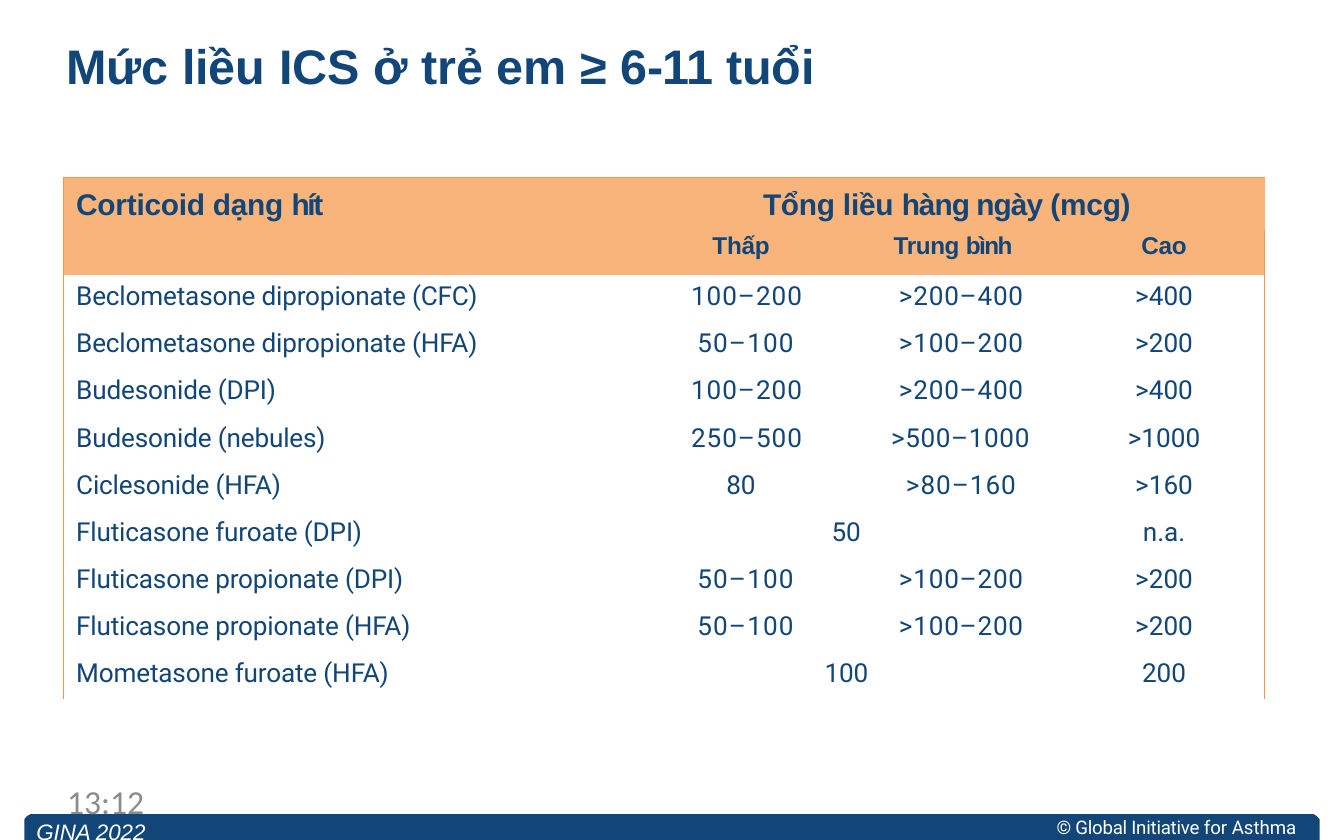
"""Build the slide with the ICS dose table for children aged 6 to 11."""
import pptx
import pptx.dml.color
import pptx.enum.text
import pptx.oxml
import pptx.oxml.ns
import pptx.util

Cm = pptx.util.Cm
Pt = pptx.util.Pt
ALIGN = pptx.enum.text.PP_ALIGN
NAVY = pptx.dml.color.RGBColor(0x12, 0x46, 0x79)
PEACH = pptx.dml.color.RGBColor(0xF8, 0xB4, 0x7A)
ORANGE = pptx.dml.color.RGBColor(0xF7, 0x95, 0x46)
GREY = pptx.dml.color.RGBColor(0x8C, 0x8C, 0x8C)
WHITE = pptx.dml.color.RGBColor(0xFF, 0xFF, 0xFF)
PAGE_WIDTH, PAGE_HEIGHT = 25.4, 15.88
PLAIN_TABLE = "{2D5ABB26-0587-4C30-8999-92F81FD0307C}"

COLUMNS = [9.91, 5.51, 3.71, 3.58]
ROWS = [0.99, 0.86] + [0.89] * 9
DOSES = [
    ("Beclometasone dipropionate (CFC)", "100–200", ">200–400", ">400"),
    ("Beclometasone dipropionate (HFA)", "50–100", ">100–200", ">200"),
    ("Budesonide (DPI)", "100–200", ">200–400", ">400"),
    ("Budesonide (nebules)", "250–500", ">500–1000", ">1000"),
    ("Ciclesonide (HFA)", "80", ">80–160", ">160"),
    ("Fluticasone furoate (DPI)", "50", "", "n.a."),
    ("Fluticasone propionate (DPI)", "50–100", ">100–200", ">200"),
    ("Fluticasone propionate (HFA)", "50–100", ">100–200", ">200"),
    ("Mometasone furoate (HFA)", "100", "", "200"),
]
LOW_BY_LENGTH = {6: (2.08, 0.6), 7: (1.96, 0.5)}
MEDIUM_BY_LENGTH = {7: (0.51, 0.5), 8: (0.38, 0.4), 9: (0.23, 0.3)}
SHARED_MARGIN = {"50": 0.34, "100": 0.2}


class SlideBuilder:
    """Hold the text colour and the current page, and add elements to it."""

    def __init__(self, page):
        self.page = page
        self.color = NAVY

    def paragraph(self, para, spans, size, name, bold=False, italic=False,
                  color=None, align=ALIGN.LEFT, indent=0):
        para.alignment = align
        properties = para._p.get_or_add_pPr()
        properties.set("marL", str(Cm(indent)))
        properties.set("indent", "0")
        font = para.font
        font.size, font.name, font.bold, font.italic = Pt(size), name, bold, italic
        font.color.rgb = color or self.color
        for text, spacing in spans:
            span = para.add_run()
            span.text = text
            span._r.get_or_add_rPr().set("spc", str(round(spacing * 100)))

    def text(self, left, top, width, height, spans, size, name, inset=0,
             line=None, **style):
        box = self.page.shapes.add_textbox(Cm(left), Cm(top), Cm(width), Cm(height))
        frame = box.text_frame
        frame.word_wrap = True
        frame.margin_left = frame.margin_right = frame.margin_bottom = 0
        frame.margin_top = Cm(inset)
        para = frame.paragraphs[0]
        if line:
            para.line_spacing = Pt(line)
        self.paragraph(para, spans, size, name, **style)

    def footer_band(self):
        corner = [(0.46, PAGE_HEIGHT), (0.46, 15.49), (0.51, 15.43), (0.58, 15.39)]
        points = corner + [(PAGE_WIDTH - x, y) for x, y in reversed(corner)]
        outline = [(Cm(x), Cm(y)) for x, y in points]
        builder = self.page.shapes.build_freeform(*outline[0])
        builder.add_line_segments(outline[1:], close=True)
        band = builder.convert_to_shape()
        band.shadow.inherit = False
        band.fill.solid()
        band.fill.fore_color.rgb = NAVY
        band.line.fill.background()

    def table(self, left, top, columns, rows):
        frame = self.page.shapes.add_table(
            len(rows), len(columns), Cm(left), Cm(top), Cm(sum(columns)), Cm(sum(rows)))
        grid = frame.table
        grid.first_row = grid.horz_banding = False
        style = grid._tbl.tblPr.find(pptx.oxml.ns.qn("a:tableStyleId"))
        style.text = PLAIN_TABLE
        for column, width in zip(grid.columns, columns):
            column.width = Cm(width)
        for row, height in zip(grid.rows, rows):
            row.height = Cm(height)
        for r in range(len(rows)):
            for c in range(len(columns)):
                cell = grid.cell(r, c)
                cell.margin_left = cell.margin_right = 0
                cell.margin_top = cell.margin_bottom = 0
                sides = (("L", c == 0), ("R", c == len(columns) - 1), ("T", r == 0))
                for side, outer in sides:
                    if outer:
                        self.border(cell, side)
                if r < 2:
                    cell.fill.solid()
                    cell.fill.fore_color.rgb = PEACH
                else:
                    cell.fill.background()
        return grid

    def border(self, cell, side):
        cell._tc.get_or_add_tcPr().append(pptx.oxml.parse_xml(
            f'<a:ln{side} {pptx.oxml.ns.nsdecls("a")} w="{int(Pt(0.5))}"><a:solidFill>'
            f'<a:srgbClr val="{ORANGE}"/></a:solidFill></a:ln{side}>'))

    def cell(self, cell, spans, size, name, top, right=0, **style):
        cell.margin_top, cell.margin_right = Cm(top), Cm(right)
        self.paragraph(cell.text_frame.paragraphs[0], spans, size, name, **style)


def fill_header(builder, grid):
    grid.cell(0, 1).merge(grid.cell(0, 3))
    heading = {"size": 16, "name": "Arial", "top": 0.22, "bold": True}
    level = {"size": 13, "name": "Arial", "top": 0.05, "bold": True}
    builder.cell(grid.cell(0, 0), [("Corticoid dạng ", -0.1), ("hít", -1.3)],
                 indent=0.25, **heading)
    builder.cell(grid.cell(0, 1),
                 [("Tổng liều ", -0.1), ("hàng ngày ", -0.5), ("(mcg)", -0.1)],
                 align=ALIGN.CENTER, indent=0.79, **heading)
    builder.cell(grid.cell(1, 1), [("Thấp", -0.1)],
                 align=ALIGN.CENTER, indent=0.3, **level)
    builder.cell(grid.cell(1, 2), [("Trung ", -0.2), ("bình", -0.8)],
                 indent=0.28, **level)
    builder.cell(grid.cell(1, 3), [("Cao", -0.1)],
                 align=ALIGN.CENTER, right=0.22, **level)


def fill_doses(builder, grid):
    body = {"size": 14, "name": "Roboto", "top": 0.12}
    for r, (drug, low, medium, high) in enumerate(DOSES, start=2):
        builder.cell(grid.cell(r, 0), [(drug, -0.1)], indent=0.25, **body)
        if not medium:
            builder.cell(grid.cell(r, 1), [(low, -0.1)], align=ALIGN.RIGHT,
                         right=SHARED_MARGIN[low], **body)
        elif len(low) in LOW_BY_LENGTH:
            indent, spacing = LOW_BY_LENGTH[len(low)]
            builder.cell(grid.cell(r, 1), [(low, spacing)], indent=indent, **body)
        else:
            builder.cell(grid.cell(r, 1), [(low, -0.1)], align=ALIGN.CENTER,
                         indent=0.3, **body)
        if medium:
            indent, spacing = MEDIUM_BY_LENGTH[len(medium)]
            builder.cell(grid.cell(r, 2), [(medium, spacing)], indent=indent, **body)
        builder.cell(grid.cell(r, 3), [(high, 0)], align=ALIGN.CENTER,
                     right=0.22, **body)


def main():
    deck = pptx.Presentation()
    deck.slide_width, deck.slide_height = Cm(PAGE_WIDTH), Cm(PAGE_HEIGHT)
    builder = SlideBuilder(deck.slides.add_slide(deck.slide_layouts[6]))
    builder.footer_band()
    builder.text(1.22, 0.66, 14.5, 1.17,
                 [("Mức liều ICS ở", 0), (" trẻ ", -0.1), ("em ≥ ", 0),
                  ("6-11 ", -0.4), ("tuổi", 0)],
                 26, "Arial", inset=0.03, bold=True, indent=0.03)
    builder.text(19.94, 15.42, 4.75, 0.46,
                 [("© Global Initiative ", -0.1), ("for Asthma", 0)],
                 10, "Roboto", color=WHITE, indent=0.03)
    builder.text(0.66, 15.47, 2.3, 0.53, [("GINA 2022", -0.05)],
                 12, "Arial", line=14.2, italic=True, color=WHITE, indent=0.03)
    grid = builder.table(1.19, 3.35, COLUMNS, ROWS)
    fill_header(builder, grid)
    fill_doses(builder, grid)
    builder.text(1.27, 14.76, 5.84, 0.79, [("13:12", 0)], 18, "Calibri", color=GREY)
    deck.save("out.pptx")


if __name__ == "__main__":
    main()
